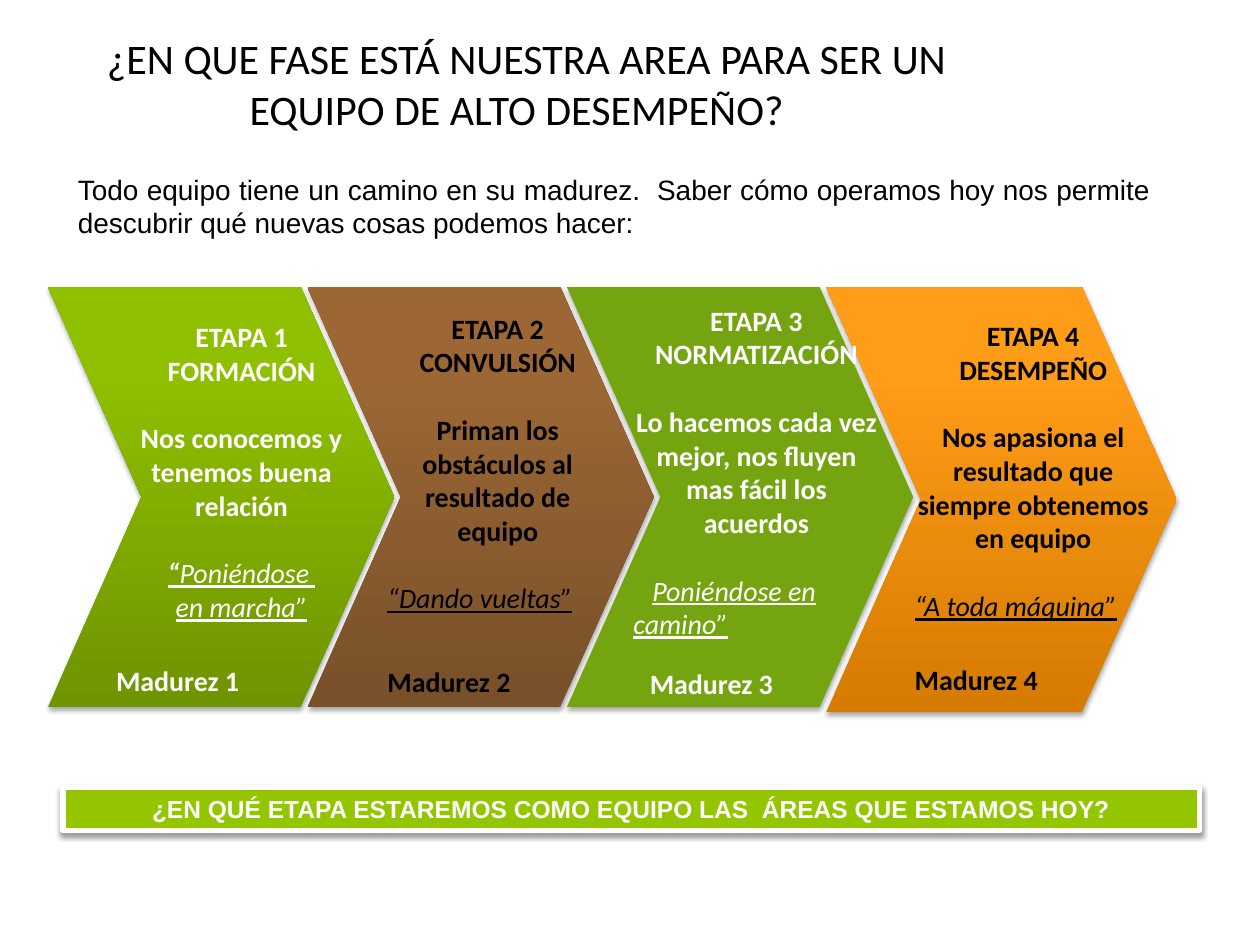
from copy import deepcopy
from dataclasses import dataclass

from lxml.etree import SubElement
from pptx import Presentation
from pptx.dml.color import RGBColor
from pptx.enum.shapes import MSO_SHAPE as SHAPE
from pptx.enum.text import MSO_ANCHOR as ANCHOR, MSO_AUTO_SIZE as AUTO, PP_ALIGN as ALIGN
from pptx.oxml.ns import qn
from pptx.util import Cm, Pt

WHITE, BLACK = "FFFFFF", "000000"


@dataclass
class Stage:
    """Content and placing of one maturity stage, offsets in cm from its chevron."""
    name: str
    body: str
    quote: tuple
    colors: tuple
    ink: str
    text_box: tuple
    label_at: tuple
    size: tuple = (6.98, 8.46)
    align: ALIGN = ALIGN.LEFT
    indent: float = 0
    lead: str = ""


STAGES = [
    Stage("FORMACIÓN", "Nos conocemos y tenemos buena relación", ("Poniéndose ", "en marcha”"),
          ("6E9400", "8FC000", "90C100"), WHITE, (1.22, 0.53, 5.36, 6.78), (1.12, 7.47),
          align=ALIGN.CENTER, lead="“"),
    Stage("CONVULSIÓN", "Priman los obstáculos al resultado de equipo", ("“Dando vueltas”",),
          ("785029", "9C6735", "9F6833"), BLACK, (1.36, 0.36, 4.95, 6.78), (1.36, 7.49)),
    Stage("NORMATIZACIÓN", "Lo hacemos cada vez mejor, nos fluyen mas fácil los acuerdos",
          ("Poniéndose en", "camino”"), ("74A510",), WHITE,
          (1.09, 0.2, 5.46, 9.12), (1.42, 7.52), indent=0.38),
    Stage("DESEMPEÑO", "Nos apasiona el resultado que siempre obtenemos en equipo",
          ("“A toda máquina”",), ("D67B01", "FF9C18", "FF9D19"), BLACK,
          (1.53, 0.51, 5.28, 7.34), (1.53, 7.44), size=(7.06, 8.56)),
]


def rgb(value):
    """Turn a hex string into a colour."""
    return RGBColor.from_string(value)


def add_paragraph(tf, align=ALIGN.LEFT, before=0, indent=0):
    """Return the next free paragraph, aligned and spaced."""
    p = tf.paragraphs[0]
    if p.runs:
        p = tf.add_paragraph()
    p.alignment, p.space_before = align, Pt(before)
    if indent:
        p._p.get_or_add_pPr().set("indent", str(Cm(indent)))
    return p


def add_text(p, text, size=16, font="Calibri", color=BLACK, bold=False, italic=False,
             underline=False):
    """Add a formatted run to a paragraph."""
    r = p.add_run()
    r.text = text
    f = r.font
    f.size, f.name, f.bold, f.italic, f.underline = Pt(size), font, bold, italic, underline
    f.color.rgb = rgb(color)


def add_box(shapes, x, y, w, h, wrap=True):
    """Add a text box and return its text frame."""
    tf = shapes.add_textbox(Cm(x), Cm(y), Cm(w), Cm(h)).text_frame
    tf.word_wrap = wrap
    return tf


def add_shadow(sp, alpha, blur, dist):
    """Give a shape a soft shadow below it."""
    sp.shadow.inherit = False
    effects = sp._element.spPr.find(qn("a:effectLst"))
    shadow = SubElement(effects, qn("a:outerShdw"), blurRad=str(Pt(blur)), dist=str(Pt(dist)),
                        dir="5400000", rotWithShape="0")
    color = SubElement(shadow, qn("a:srgbClr"), val=BLACK)
    SubElement(color, qn("a:alpha"), val=str(alpha * 1000))


def fill_shape(sp, colors):
    """Fill with one colour, or with three from the bottom up."""
    fill = sp.fill
    if len(colors) == 1:
        fill.solid()
        fill.fore_color.rgb = rgb(colors[0])
        return
    fill.gradient()
    fill.gradient_angle = 90
    stops = sp._element.spPr.find(".//" + qn("a:gsLst"))
    stops.append(deepcopy(stops[0]))
    for stop, color, position in zip(fill.gradient_stops, colors, (0, 0.8, 1)):
        stop.color.rgb = rgb(color)
        stop.position = position


def add_title(slide, x, y, w, h):
    """Place the slide title."""
    title = slide.shapes.title
    title.left, title.top, title.width, title.height = Cm(x), Cm(y), Cm(w), Cm(h)
    tf = title.text_frame
    tf.word_wrap, tf.auto_size, tf.vertical_anchor = True, AUTO.NONE, ANCHOR.TOP
    add_text(add_paragraph(tf, ALIGN.CENTER, indent=0.4),
             "¿EN QUE FASE ESTÁ NUESTRA AREA PARA SER UN EQUIPO DE ALTO DESEMPEÑO?", size=24)


def add_intro(slide, x, y, w, h):
    """Place the introductory sentence."""
    p = add_paragraph(add_box(slide.shapes, x, y, w, h), ALIGN.JUSTIFY)
    add_text(p, "Todo equipo tiene un camino en su madurez.  Saber cómo operamos hoy nos "
                "permite descubrir qué nuevas cosas podemos hacer:", font="Arial")


def add_chevron(shapes, stage, x, y):
    """Draw the chevron of one stage."""
    w, h = stage.size
    sp = shapes.add_shape(SHAPE.CHEVRON, Cm(x), Cm(y), Cm(w), Cm(h))
    sp.adjustments[0] = 0.27
    fill_shape(sp, stage.colors)
    sp.line.fill.background()
    add_shadow(sp, 35, 3.1, 1.8)


def add_stage_text(shapes, stage, number, x, y):
    """Write the heading, description, quote and label of one stage."""
    dx, dy, w, h = stage.text_box
    tf = add_box(shapes, x + dx, y + dy, w, h)
    gap = 19.5
    for text, before in ((f"ETAPA {number}", 0), (stage.name, 0), (stage.body, gap)):
        add_text(add_paragraph(tf, ALIGN.CENTER, before), text, color=stage.ink, bold=True)
    quote = dict(color=stage.ink, italic=True, underline=True)
    for i, line in enumerate(stage.quote):
        first = i == 0
        p = add_paragraph(tf, stage.align, gap if first else 0, stage.indent if first else 0)
        if first and stage.lead:
            add_text(p, stage.lead, bold=True, **quote)
        add_text(p, line, **quote)
    dx, dy = stage.label_at
    label = add_box(shapes, x + dx, y + dy, 3.02, 0.94, wrap=False)
    add_text(add_paragraph(label), f"Madurez {number}", color=stage.ink, bold=True)


def add_stages(slide, x, y, pitch):
    """Place the row of stages, text above all chevrons."""
    shapes = slide.shapes.add_group_shape().shapes
    for i, stage in enumerate(STAGES):
        add_chevron(shapes, stage, x + i * pitch, y)
    for i, stage in enumerate(STAGES):
        add_stage_text(shapes, stage, i + 1, x + i * pitch, y)


def add_question(slide, x, y, w, h):
    """Place the closing question bar."""
    sp = slide.shapes.add_shape(SHAPE.RECTANGLE, Cm(x), Cm(y), Cm(w), Cm(h))
    fill_shape(sp, ("94C600",))
    sp.line.color.rgb = rgb(WHITE)
    sp.line.width = Pt(3)
    add_shadow(sp, 38, 3.1, 1.6)
    tf = sp.text_frame
    tf.word_wrap, tf.vertical_anchor = True, ANCHOR.MIDDLE
    add_text(add_paragraph(tf, ALIGN.CENTER),
             "¿EN QUÉ ETAPA ESTAREMOS COMO EQUIPO LAS  ÁREAS QUE ESTAMOS HOY?",
             size=14, font="Arial", color=WHITE, bold=True)


def main():
    """Build and save the slide."""
    prs = Presentation()
    prs.slide_width, prs.slide_height = Cm(25.4), Cm(19.05)
    slide = prs.slides.add_slide(prs.slide_layouts[5])
    add_title(slide, 0.51, 0.53, 19.81, 2.62)
    add_intro(slide, 1.32, 3.35, 22.12, 1.63)
    add_stages(slide, 0.97, 5.79, 5.23)
    add_question(slide, 1.27, 15.88, 22.91, 0.86)
    prs.save("out.pptx")


if __name__ == "__main__":
    main()
